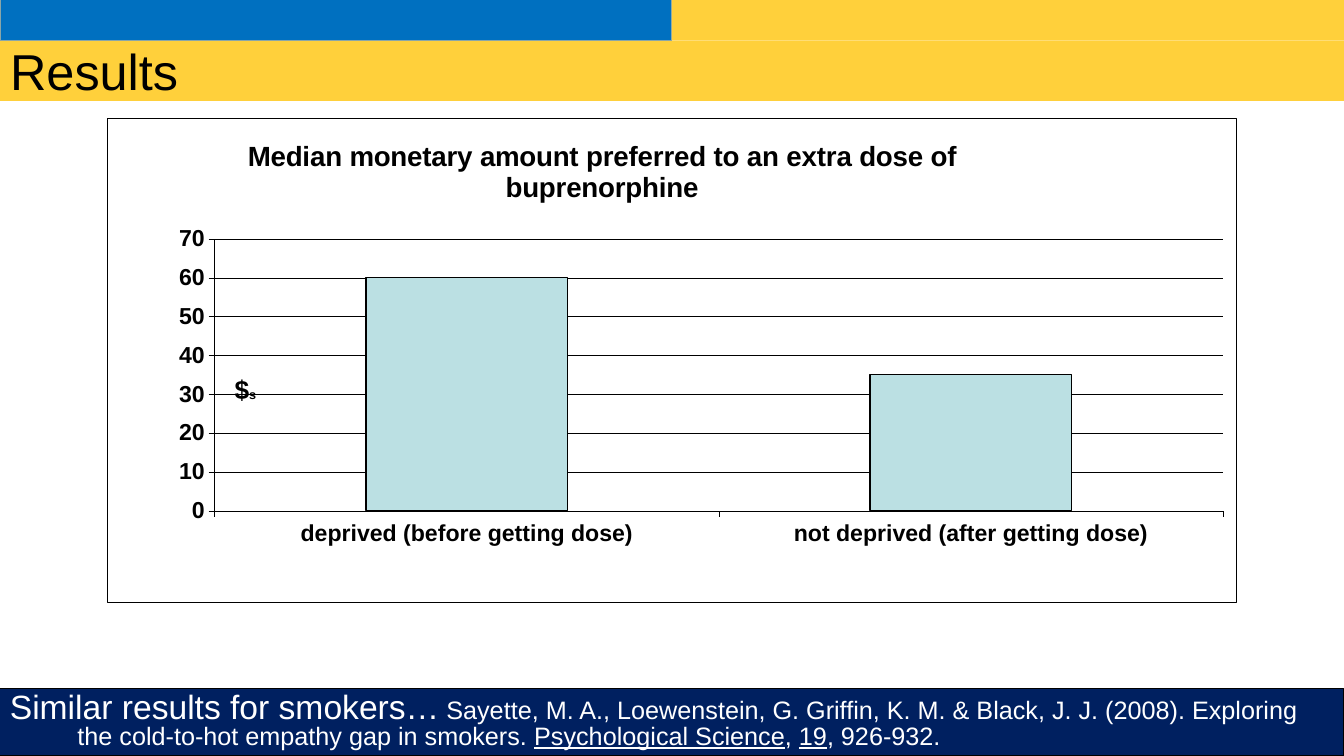
from lxml.etree import fromstring
from pptx import Presentation
from pptx.chart.data import CategoryChartData
from pptx.dml.color import RGBColor
from pptx.enum.chart import XL_CHART_TYPE, XL_TICK_LABEL_POSITION, XL_TICK_MARK
from pptx.enum.shapes import MSO_SHAPE
from pptx.enum.text import MSO_ANCHOR, PP_ALIGN
from pptx.oxml.ns import nsdecls, qn
from pptx.util import Inches, Pt

BLACK = RGBColor(0, 0, 0)
WHITE = RGBColor(255, 255, 255)
BLUE = RGBColor(0x00, 0x70, 0xC0)
GRAY = RGBColor(0x8A, 0xA6, 0xA8)
GOLD = RGBColor(0xFF, 0xD0, 0x3B)
NAVY = RGBColor(0x00, 0x20, 0x60)
TEAL = RGBColor(0xBB, 0xE0, 0xE3)

WIDE, HIGH = Inches(13.33), Inches(7.5)
HALF = 0.5
BAND, HEAD, FOOT = 0.4 / 7.5, 0.6 / 7.5, 0.67 / 7.5

BASE = {"name": "Arial", "bold": False}
BOLD = {"name": "Arial", "bold": True}
CITE = [
    ("Similar results for smokers…", {"size": Pt(24)}),
    (" Sayette, M. A., Loewenstein, G. Griffin, K. M. & Black, J. J. (2008). "
     "Exploring the cold-to-hot empathy gap in smokers. ", {}),
    ("Psychological Science", {"underline": True}),
    (", ", {}),
    ("19", {"underline": True}),
    (", 926-932.", {}),
]


def style(font, tint, form):
    """Apply a colour and a dict of font values."""
    for key, value in form.items():
        setattr(font, key, value)
    font.color.rgb = tint


def place(shape, left, top, wide, high):
    """Set a shape's box from shares of the slide."""
    box = {"left": WIDE * left, "top": HIGH * top,
           "width": WIDE * wide, "height": HIGH * high}
    for key, value in box.items():
        setattr(shape, key, int(value))


def paint(shape, fill, line=None, width=0):
    shape.fill.solid()
    shape.fill.fore_color.rgb = fill
    if line is None:
        shape.line.fill.background()
    else:
        shape.line.color.rgb = line
        shape.line.width = Pt(width)


def add_bar(slide, box, fill, line=None, width=0):
    bar = slide.shapes.add_shape(MSO_SHAPE.RECTANGLE, 0, 0, 0, 0)
    place(bar, *box)
    bar.shadow.inherit = False
    paint(bar, fill, line, width)
    return bar


def add_runs(para, runs, tint, form):
    for text, extra in runs:
        run = para.add_run()
        run.text = text
        style(run.font, tint, {**form, **extra})


def set_title(slide, text):
    title = slide.shapes.title
    place(title, 0, BAND, 1, HEAD)
    paint(title, GOLD)
    frame = title.text_frame
    frame.vertical_anchor = MSO_ANCHOR.MIDDLE
    para = frame.paragraphs[0]
    para.alignment = PP_ALIGN.LEFT
    add_runs(para, [(text, {"size": Pt(36)})], BLACK, BASE)


def set_layout(node, index, x, y, size=None):
    """Pin a chart part at shares of the chart's box."""
    for old in node.findall(qn("c:layout")):
        node.remove(old)
    marks = [("layoutTarget", "inner")] if size else []
    marks += [("xMode", "edge"), ("yMode", "edge"), ("x", x), ("y", y)]
    if size:
        marks += zip("wh", size)
    body = "".join(f'<c:{tag} val="{value}"/>' for tag, value in marks)
    node.insert(index, fromstring(
        f'<c:layout {nsdecls("c")}><c:manualLayout>{body}'
        f'</c:manualLayout></c:layout>'))


def add_border(chart):
    """Give the chart area a white fill and a thin black line."""
    area = fromstring(
        f'<c:spPr {nsdecls("c", "a")}>'
        f'<a:solidFill><a:srgbClr val="{WHITE}"/></a:solidFill>'
        f'<a:ln w="{Pt(0.75)}"><a:solidFill><a:srgbClr val="{BLACK}"/>'
        f'</a:solidFill></a:ln></c:spPr>')
    chart.element.find(qn("c:chart")).addnext(area)


def set_axis(axis):
    axis.major_tick_mark = XL_TICK_MARK.OUTSIDE
    axis.minor_tick_mark = XL_TICK_MARK.NONE
    style(axis.tick_labels.font, BLACK, {**BOLD, "size": Pt(16.5)})
    axis.format.line.color.rgb = BLACK
    axis.format.line.width = Pt(0.23)


def add_graph(slide):
    data = CategoryChartData()
    data.categories = ["deprived (before getting dose)",
                       "not deprived (after getting dose)"]
    data.add_series("Series 1", (60, 35))
    frame = slide.shapes.add_chart(XL_CHART_TYPE.COLUMN_CLUSTERED,
                                   0, 0, WIDE, HIGH, data)
    place(frame, 1.06 / 13.33, 1.17 / 7.5, 11.21 / 13.33, 4.81 / 7.5)
    chart = frame.chart
    chart.has_legend = False
    style(chart.font, BLACK, {**BOLD, "size": Pt(16.5)})
    add_border(chart)

    # Heading
    chart.has_title = True
    head = chart.chart_title
    add_runs(head.text_frame.paragraphs[0],
             [("Median monetary amount preferred to an extra dose of "
               "buprenorphine", {"size": Pt(19.8)})], BLACK, BOLD)
    set_layout(head.element, 1, 0.12, 0.03)

    # Axes
    set_axis(chart.category_axis)
    chart.category_axis.tick_label_position = XL_TICK_LABEL_POSITION.LOW
    money = chart.value_axis
    set_axis(money)
    money.minimum_scale, money.maximum_scale, money.major_unit = 0, 70, 10
    money.has_major_gridlines = True
    grid = money.major_gridlines.format.line
    grid.color.rgb = BLACK
    grid.width = Pt(0.23)
    money.has_title = True
    label = money.axis_title
    add_runs(label.text_frame.paragraphs[0],
             [("$", {"size": Pt(18.8)}), ("s", {"size": Pt(9)})], BLACK, BOLD)
    turn = label.element.find(f".//{qn('a:bodyPr')}")
    turn.set("rot", "0")
    turn.set("vert", "horz")
    set_layout(label.element, 1, 0.11, 0.52)

    # Columns
    plot = chart.plots[0]
    plot.gap_width = 150
    plot.vary_by_categories = False
    paint(plot.series[0].format, TEAL, BLACK, 0.92)
    area = chart.element.find(f".//{qn('c:plotArea')}")
    set_layout(area, 0, 0.095, 0.249, (0.893, 0.562))


def add_cite(slide):
    bar = add_bar(slide, (0, 1 - FOOT, 1, FOOT), NAVY, BLACK, 0.75)
    frame = bar.text_frame
    frame.word_wrap = True
    frame.vertical_anchor = MSO_ANCHOR.TOP
    para = frame.paragraphs[0]
    para.alignment = PP_ALIGN.LEFT
    para.line_spacing = 0.8
    props = para._p.get_or_add_pPr()
    props.set("marL", str(Inches(0.67)))
    props.set("indent", str(-Inches(0.67)))
    add_runs(para, CITE, WHITE, {**BASE, "size": Pt(18)})


def main():
    deck = Presentation()
    deck.slide_width, deck.slide_height = WIDE, HIGH
    slide = deck.slides.add_slide(deck.slide_layouts[5])

    # Top bands and title
    add_bar(slide, (0, 0, HALF, BAND), BLUE, GRAY, 0.75)
    add_bar(slide, (HALF, 0, HALF, BAND), GOLD)
    set_title(slide, "Results")

    # Chart and source line
    add_graph(slide)
    add_cite(slide)
    deck.save("out.pptx")


if __name__ == "__main__":
    main()
